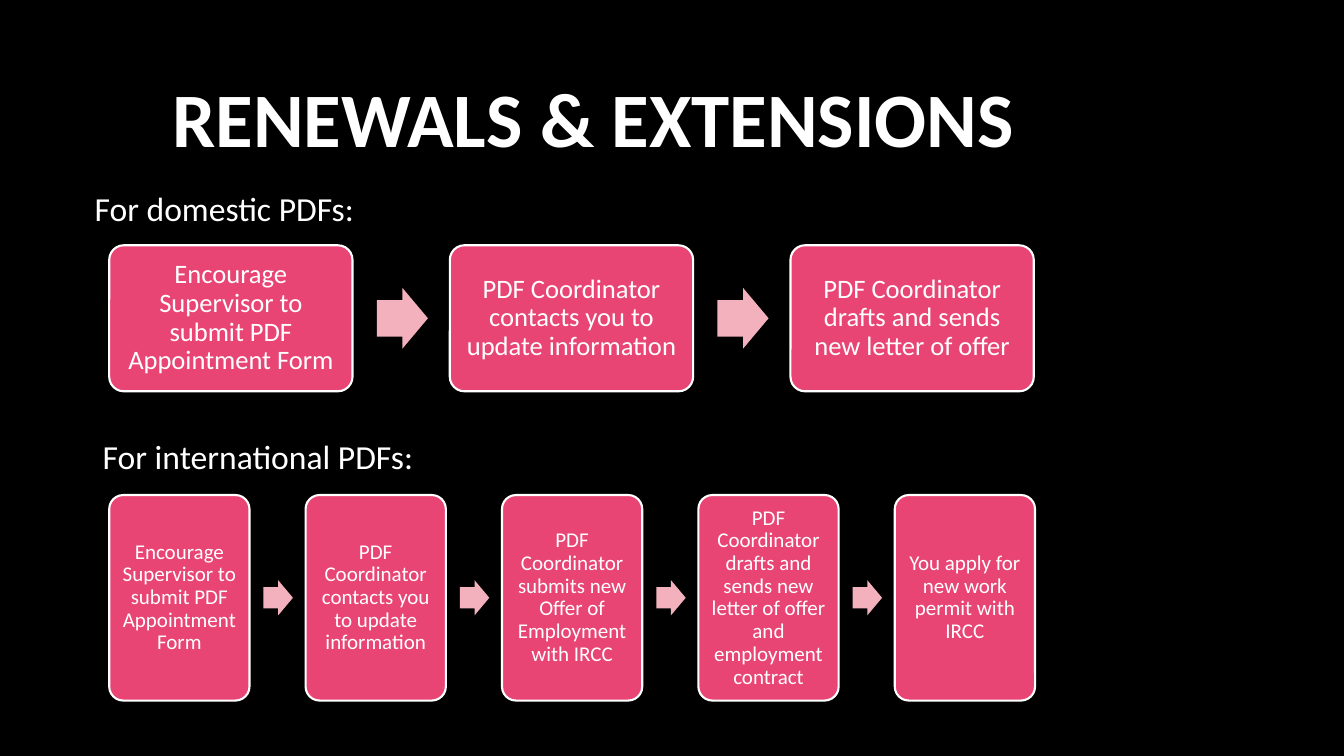
from pptx import Presentation
from pptx.dml.color import RGBColor
from pptx.enum.shapes import MSO_SHAPE
from pptx.enum.text import MSO_ANCHOR, PP_ALIGN
from pptx.util import Pt

COLORS = {"background": "000000", "text": "FFFFFF", "step": "E84574", "arrow": "F2B1BC"}

DOMESTIC_STEPS = [
    "Encourage Supervisor to submit PDF Appointment Form",
    "PDF Coordinator contacts you to update information",
    "PDF Coordinator drafts and sends new letter of offer",
]
INTERNATIONAL_STEPS = [
    "Encourage Supervisor to submit PDF Appointment Form",
    "PDF Coordinator contacts you to update information",
    "PDF Coordinator submits new Offer of Employment with IRCC",
    "PDF Coordinator drafts and sends new letter of offer and employment contract",
    "You apply for new work permit with IRCC",
]


class ProcessSlide:
    font_name = "Calibri"

    def __init__(self, slide):
        self.slide = slide
        background = slide.background.fill
        background.solid()
        background.fore_color.rgb = self.color("background")

    def color(self, role):
        return RGBColor.from_string(COLORS[role])

    def set_wording(self, frame, wording, size, bold=False):
        frame.word_wrap = True
        frame.text = wording
        paragraph = frame.paragraphs[0]
        for run in paragraph.runs:
            run.font.name = self.font_name
            run.font.size = Pt(size)
            run.font.bold = bold
            run.font.color.rgb = self.color("text")
        return paragraph

    def text(self, wording, left, top, width, height, size, bold=False):
        box = self.slide.shapes.add_textbox(Pt(left), Pt(top), Pt(width), Pt(height))
        self.set_wording(box.text_frame, wording, size, bold)
        return box.text_frame

    def shape(self, kind, role, left, top, width, height):
        shape = self.slide.shapes.add_shape(kind, Pt(left), Pt(top), Pt(width), Pt(height))
        shape.shadow.inherit = False
        shape.fill.solid()
        shape.fill.fore_color.rgb = self.color(role)
        return shape

    def step(self, wording, left, top, width, height, size, inset):
        step = self.shape(MSO_SHAPE.ROUNDED_RECTANGLE, "step", left, top, width, height)
        step.adjustments[0] = 0.1
        step.line.color.rgb = self.color("text")
        step.line.width = Pt(1.5)
        frame = step.text_frame
        frame.margin_left = frame.margin_right = Pt(inset)
        frame.margin_top = frame.margin_bottom = Pt(inset)
        frame.vertical_anchor = MSO_ANCHOR.MIDDLE
        paragraph = self.set_wording(frame, wording, size)
        paragraph.alignment = PP_ALIGN.CENTER
        paragraph.line_spacing = 0.9

    def arrow(self, left, middle, width, height):
        arrow = self.shape(MSO_SHAPE.RIGHT_ARROW, "arrow", left, middle - height / 2, width, height)
        arrow.adjustments[0] = 0.6
        arrow.adjustments[1] = 0.5
        arrow.line.fill.background()

    def process(self, steps, left, top, width, height, size, inset):
        for index, wording in enumerate(steps):
            step_left = left + index * 1.4 * width
            if index:
                self.arrow(step_left - 0.3 * width, top + height / 2, 0.21 * width, 0.25 * width)
            self.step(wording, step_left, top, width, height, size, inset)


def main():
    presentation = Presentation()
    presentation.slide_width = Pt(960)
    presentation.slide_height = Pt(540)
    renewals = ProcessSlide(presentation.slides.add_slide(presentation.slide_layouts[6]))

    title = renewals.text("RENEWALS & EXTENSIONS", 116, 23, 650, 114.5, 55, bold=True)
    title.vertical_anchor = MSO_ANCHOR.MIDDLE
    title.margin_top = Pt(9.6)

    renewals.text("For domestic PDFs:", 60.5, 131, 264, 36, 24)
    renewals.process(DOMESTIC_STEPS, 78, 175.2, 173.8, 104.3, 19, 5.7)

    renewals.text("For international PDFs:", 66.3, 307.8, 314, 36, 24)
    renewals.process(INTERNATIONAL_STEPS, 78, 353.6, 100.2, 146.8, 15, 4.5)

    presentation.save("out.pptx")


if __name__ == "__main__":
    main()
